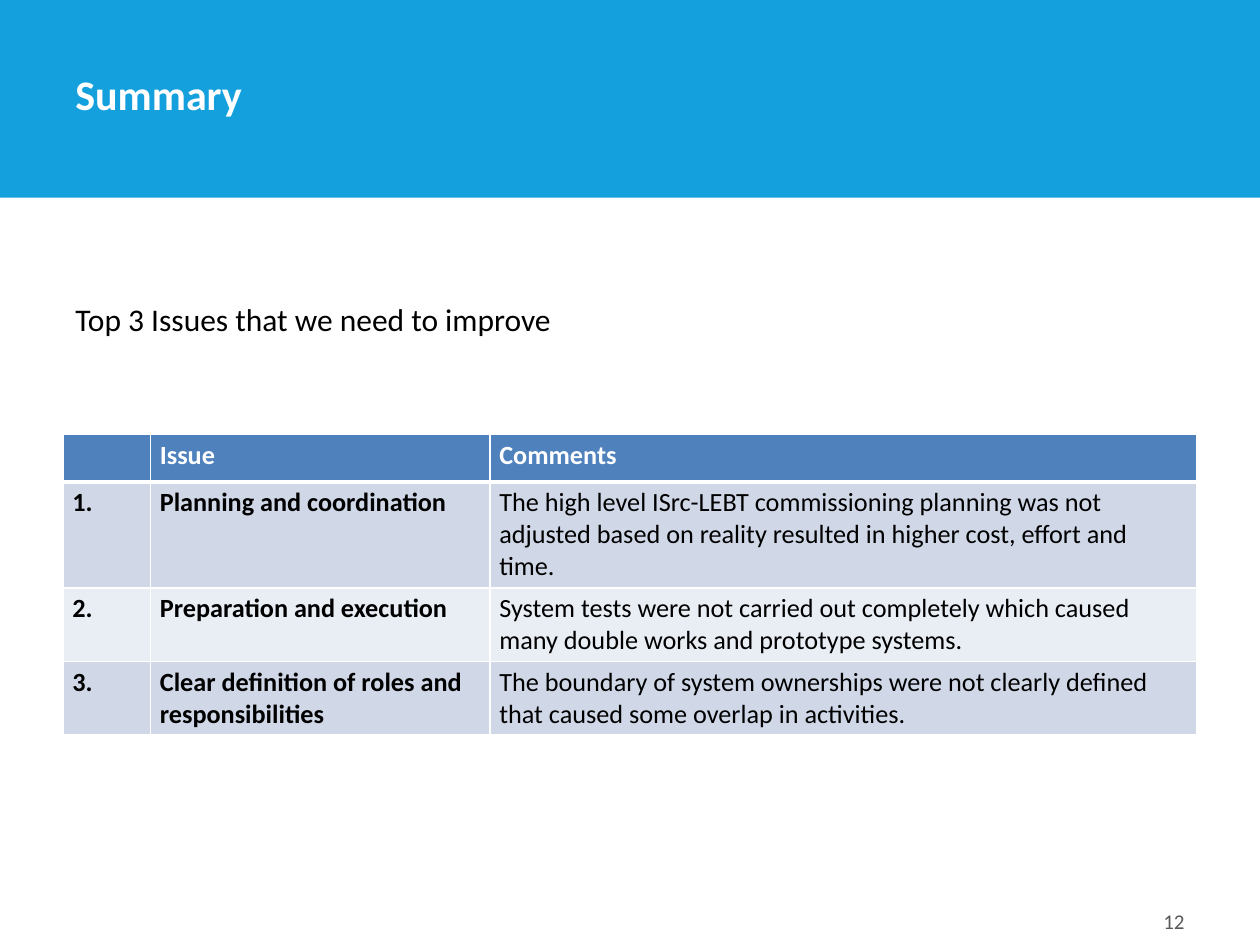
from dataclasses import dataclass

from lxml.etree import SubElement
from pptx import Presentation
from pptx.dml.color import RGBColor as RGB
from pptx.enum.shapes import MSO_SHAPE as SHAPE
from pptx.enum.text import MSO_ANCHOR as ANCHOR, PP_ALIGN as ALIGN
from pptx.oxml.ns import qn
from pptx.util import Pt


@dataclass(frozen=True)
class Theme:
    font: str = "Calibri"
    banner: str = "13A0DD"
    header: str = "4F81BD"
    bands: tuple = ("D0D8E8", "E9EDF4")
    white: str = "FFFFFF"
    black: str = "000000"
    gray: str = "595959"
    title: float = 24
    body: float = 18
    cell: float = 15
    number: float = 12


THEME = Theme()


def write(tf, text, size, color, bold=False, align=ALIGN.LEFT):
    p = tf.paragraphs[0]
    p.alignment = align
    r = p.add_run()
    r.text = text
    r.font.name = THEME.font
    r.font.size = Pt(size)
    r.font.bold = bold
    r.font.color.rgb = RGB.from_string(color)


def set_border(cell, sides, width, color):
    tc_pr = cell._tc.get_or_add_tcPr()
    for side in sides:
        ln = SubElement(tc_pr, qn(f"a:ln{side}"), w=str(Pt(width)))
        fill = SubElement(ln, qn("a:solidFill"))
        SubElement(fill, qn("a:srgbClr"), val=color)


class SlideBuilder:
    def __init__(self, slide, theme):
        self.slide = slide
        self.theme = theme

    def rect(self, x, y, w, h, color):
        sp = self.slide.shapes.add_shape(SHAPE.RECTANGLE, Pt(x), Pt(y), Pt(w), Pt(h))
        sp.shadow.inherit = False
        sp.fill.solid()
        sp.fill.fore_color.rgb = RGB.from_string(color)
        sp.line.fill.background()

    def text(self, x, y, w, h, text, anchor=ANCHOR.TOP, wrap=True, **fmt):
        tf = self.slide.shapes.add_textbox(Pt(x), Pt(y), Pt(w), Pt(h)).text_frame
        tf.word_wrap = wrap
        tf.vertical_anchor = anchor
        write(tf, text, **fmt)

    def table(self, x, y, widths, heights, rows):
        t = self.theme
        frame = self.slide.shapes.add_table(
            len(rows), len(widths), Pt(x), Pt(y), Pt(sum(widths)), Pt(sum(heights)))
        table = frame.table
        for column, width in zip(table.columns, widths):
            column.width = Pt(width)
        for i, (row, height) in enumerate(zip(rows, heights)):
            table.rows[i].height = Pt(height)
            header = i == 0
            fill = t.header if header else t.bands[(i - 1) % 2]
            for j, text in enumerate(row):
                cell = table.cell(i, j)
                cell.margin_left = cell.margin_right = Pt(5.4)
                cell.margin_top = cell.margin_bottom = Pt(2.7)
                set_border(cell, "LR", 1, t.white)
                set_border(cell, "T", 3 if i == 1 else 1, t.white)
                set_border(cell, "B", 3 if header else 1, t.white)
                cell.fill.solid()
                cell.fill.fore_color.rgb = RGB.from_string(fill)
                write(cell.text_frame, text, size=t.cell,
                      color=t.white if header else t.black, bold=header or j < 2)


def main():
    prs = Presentation()
    prs.slide_width, prs.slide_height = Pt(720), Pt(540)
    t = THEME
    s = SlideBuilder(prs.slides.add_slide(prs.slide_layouts[6]), t)

    s.rect(0, 0, 720, 113, t.banner)
    s.text(36, 27.4, 562, 44, "Summary", anchor=ANCHOR.BOTTOM,
           size=t.title, color=t.white, bold=True)
    s.text(516, 508, 168, 29, "12", anchor=ANCHOR.BOTTOM,
           size=t.number, color=t.gray, align=ALIGN.RIGHT)
    s.table(36, 248.4, widths=(50, 194, 404), heights=(24, 60.5, 42, 42), rows=(
        ("", "Issue", "Comments"),
        ("1.", "Planning and coordination",
         "The high level ISrc-LEBT commissioning planning was not adjusted "
         "based on reality resulted in higher cost, effort and time."),
        ("2.", "Preparation and execution",
         "System tests were not carried out completely which caused many "
         "double works and prototype systems."),
        ("3.", "Clear definition of roles and responsibilities",
         "The boundary of system ownerships were not clearly defined that "
         "caused some overlap in activities."),
    ))
    s.text(36, 168, 289.5, 29, "Top 3 Issues that we need to improve", wrap=False,
           size=t.body, color=t.black)

    prs.save("out.pptx")


if __name__ == "__main__":
    main()
